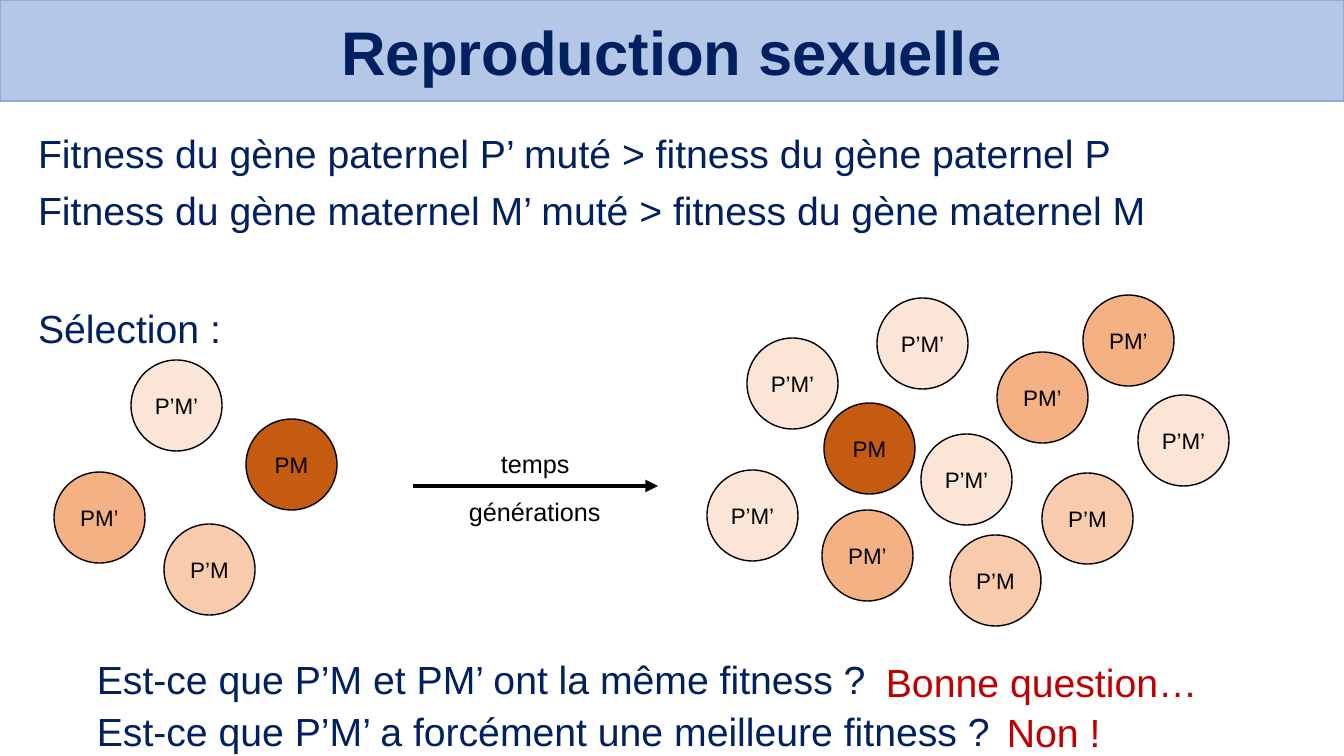
from lxml.etree import SubElement
from pptx import Presentation
from pptx.dml.color import RGBColor
from pptx.enum.shapes import MSO_CONNECTOR, MSO_SHAPE
from pptx.enum.text import MSO_ANCHOR, MSO_AUTO_SIZE, PP_ALIGN
from pptx.oxml.ns import qn
from pptx.util import Pt

PX = 9144000 / 1008
NAVY, RED, BLACK = "002060", "C00000", "000000"
DIAMETER = 91
GENOTYPE_FILLS = {"P’M’": "FBE5D6", "P’M": "F8CBAD", "PM’": "F4B183", "PM": "C55A11"}


def px(*lengths):
    """Turn pixel lengths into EMU."""
    return [round(length * PX) for length in lengths]


def write(paragraph, text, size=28, color=NAVY, bold=False, align=PP_ALIGN.LEFT):
    paragraph.alignment = align
    run = paragraph.add_run()
    run.text = text
    run.font.name = "Arial"
    run.font.size = Pt(size)
    run.font.bold = bold
    run.font.color.rgb = RGBColor.from_string(color)


presentation = Presentation()
presentation.slide_width, presentation.slide_height = px(1344, 756)
slide = presentation.slides.add_slide(presentation.slide_layouts[1])
shapes = slide.shapes

# Title band
title = shapes.title
title.left, title.top, title.width, title.height = px(0, 0, 1344, 101)
title.fill.solid()
title.fill.fore_color.rgb = RGBColor.from_string("B4C7E7")
title.line.color.rgb = RGBColor.from_string("8FAADC")
title.line.width = Pt(1)
title.text_frame.vertical_anchor = MSO_ANCHOR.MIDDLE
title.text_frame.auto_size = MSO_AUTO_SIZE.NONE
write(title.text_frame.paragraphs[0], "Reproduction sexuelle", size=44, bold=True,
      align=PP_ALIGN.CENTER)

# Statements
body = slide.placeholders[1]
body.left, body.top, body.width, body.height = px(28, 130, 1279, 576)
body.text_frame.auto_size = MSO_AUTO_SIZE.NONE
statements = [
    ("Fitness du gène paternel P’ muté > fitness du gène paternel P", 10),
    ("Fitness du gène maternel M’ muté > fitness du gène maternel M", 10),
    ("Sélection :", 54),
]
for index, (text, space_before) in enumerate(statements):
    paragraph = body.text_frame.add_paragraph() if index else body.text_frame.paragraphs[0]
    write(paragraph, text)
    paragraph.line_spacing = 0.9
    paragraph.space_before = Pt(space_before)
    properties = paragraph._p.get_or_add_pPr()
    properties.set("marL", "0")
    properties.set("indent", "0")
    SubElement(properties, qn("a:buNone"))

# Individuals before and after selection
individuals = [
    ("P’M’", 131, 360), ("P’M", 164, 524), ("PM’", 54, 472), ("PM", 246, 419),
    ("P’M’", 747, 338), ("P’M’", 921, 434), ("P’M’", 707, 470), ("P’M’", 877, 298),
    ("PM’", 997, 352), ("PM’", 822, 510), ("P’M’", 1138, 395), ("PM", 824, 403),
    ("P’M", 950, 535), ("P’M", 1042, 473), ("PM’", 1083, 295),
]
for genotype, left, top in individuals:
    circle = shapes.add_shape(MSO_SHAPE.OVAL, *px(left, top, DIAMETER, DIAMETER))
    circle.shadow.inherit = False
    circle.fill.solid()
    circle.fill.fore_color.rgb = RGBColor.from_string(GENOTYPE_FILLS[genotype])
    circle.line.color.rgb = RGBColor.from_string(BLACK)
    circle.line.width = Pt(1)
    circle.text_frame.word_wrap = False
    circle.text_frame.vertical_anchor = MSO_ANCHOR.MIDDLE
    write(circle.text_frame.paragraphs[0], genotype, size=16, color=BLACK,
          align=PP_ALIGN.CENTER)

# Time arrow
arrow = shapes.add_connector(MSO_CONNECTOR.STRAIGHT, *px(413, 486, 658, 486))
arrow.line.color.rgb = RGBColor.from_string(BLACK)
arrow.line.width = Pt(3)
SubElement(arrow.line._get_or_add_ln(), qn("a:tailEnd"), type="triangle")
SubElement(arrow._element.spPr, qn("a:effectLst"))

# Arrow labels, questions and answers
labels = [
    ("temps", 491, 443, 90, 40, 18, BLACK),
    ("générations", 459, 491, 153, 40, 18, BLACK),
    ("Est-ce que P’M et PM’ ont la même fitness ?", 87, 650, 798, 57, 28, NAVY),
    ("Bonne question…", 876, 653, 336, 57, 28, RED),
    ("Est-ce que P’M’ a forcément une meilleure fitness ?", 87, 702, 943, 57, 28, NAVY),
    ("Non !", 997, 703, 115, 57, 28, RED),
]
for text, left, top, width, height, size, color in labels:
    label = shapes.add_textbox(*px(left, top, width, height))
    label.text_frame.word_wrap = width > 900
    label.text_frame.auto_size = MSO_AUTO_SIZE.SHAPE_TO_FIT_TEXT
    write(label.text_frame.paragraphs[0], text, size=size, color=color)

presentation.save("out.pptx")
